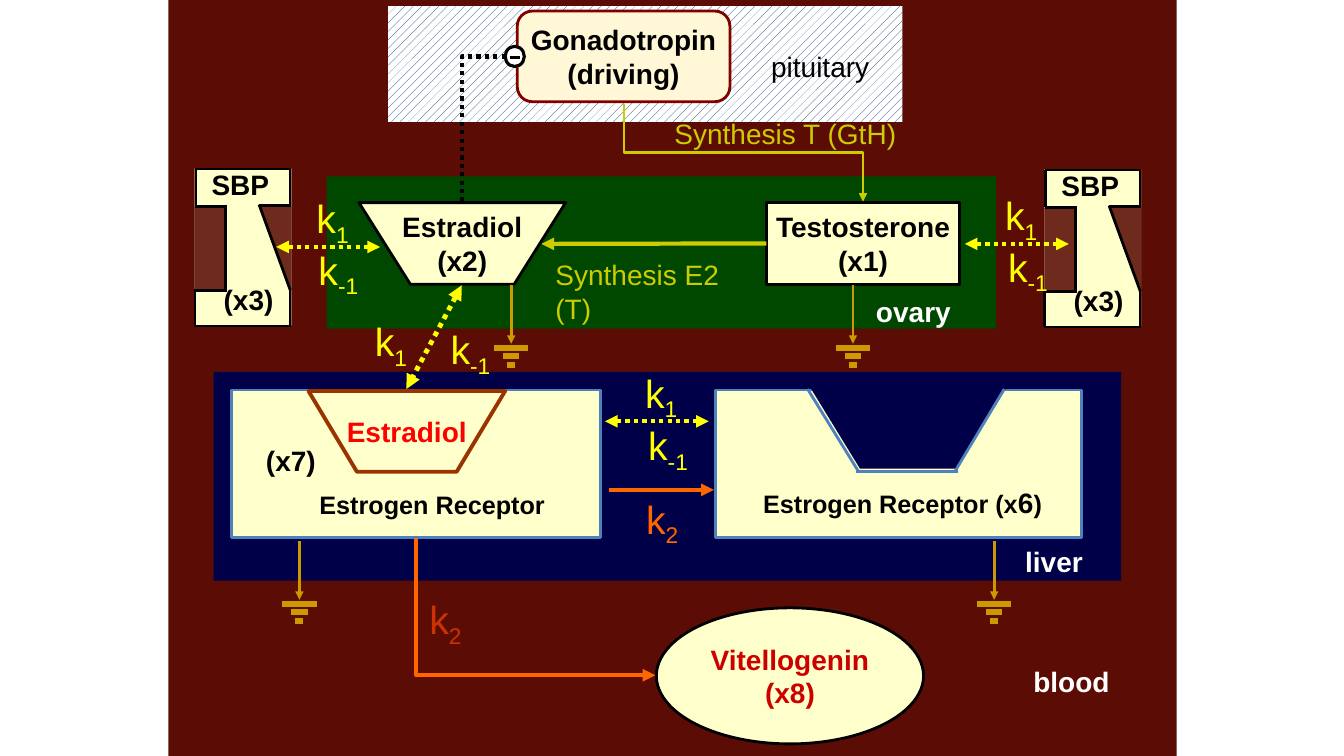
from lxml import etree
from pptx import Presentation
from pptx.dml.color import RGBColor
from pptx.enum import dml, shapes, text
from pptx.oxml.ns import qn
from pptx.util import Inches, Pt

BLACK = RGBColor(0x00, 0x00, 0x00)
WHITE = RGBColor(0xFF, 0xFF, 0xFF)
BLOOD = RGBColor(0x5B, 0x0D, 0x05)
LIVER = RGBColor(0x00, 0x00, 0x48)
OVARY = RGBColor(0x00, 0x48, 0x00)
HATCH = RGBColor(0x00, 0x33, 0x66)
CREAM = RGBColor(0xFF, 0xFF, 0xCC)
IVORY = RGBColor(0xFF, 0xF7, 0xD5)
MAROON = RGBColor(0x80, 0x00, 0x00)
BROWN = RGBColor(0x99, 0x33, 0x00)
BLUE = RGBColor(0x4F, 0x81, 0xBD)
RED = RGBColor(0xFF, 0x00, 0x00)
CRIMSON = RGBColor(0xCC, 0x00, 0x00)
RUST = RGBColor(0xCC, 0x33, 0x00)
ORANGE = RGBColor(0xFF, 0x66, 0x00)
YELLOW = RGBColor(0xFF, 0xFF, 0x00)
OLIVE = RGBColor(0xCC, 0xCC, 0x00)
GOLD = RGBColor(0xCC, 0x99, 0x00)

RECTANGLE = shapes.MSO_SHAPE.RECTANGLE
OVAL = shapes.MSO_SHAPE.OVAL
CENTER = text.PP_ALIGN.CENTER

presentation = Presentation()
presentation.slide_width = Inches(13.33)
presentation.slide_height = Inches(7.5)
slide = presentation.slides.add_slide(presentation.slide_layouts[6])


def format_shape(shape, words="", fill=None, line=None, width=2, size=20, color=BLACK,
                 bold=True, align=CENTER, anchor=text.MSO_ANCHOR.MIDDLE, wrap=False,
                 accent_size=None, baseline=0):
    """Style a shape and its text; parts between bars take the accent format."""
    shape.shadow.inherit = False
    if fill is None:
        shape.fill.background()
    else:
        shape.fill.solid()
        shape.fill.fore_color.rgb = fill
    if line is None:
        shape.line.fill.background()
    else:
        shape.line.color.rgb = line
        shape.line.width = Pt(width)
    if not words:
        return
    frame = shape.text_frame
    frame.word_wrap = wrap
    frame.vertical_anchor = anchor
    for row, content in enumerate(words.split("\n")):
        paragraph = frame.add_paragraph() if row else frame.paragraphs[0]
        paragraph.alignment = align
        for index, part in enumerate(content.split("|")):
            accent = index % 2 == 1
            run = paragraph.add_run()
            run.text = part
            run.font.name = "Arial"
            run.font.size = Pt(accent_size if accent and accent_size else size)
            run.font.bold = bold
            run.font.color.rgb = color
            if accent and baseline:
                run.font._element.set("baseline", str(baseline * 1000))


def draw_line(start, end, color, width, head=None, tail=None, dotted=False, bend=None):
    """Draw a line, or with a bend preset an elbow that leaves vertically."""
    (x1, y1), (x2, y2) = start, end
    if bend:  # an elbow is a horizontal one turned by 270 degrees about its centre
        cx, cy = (x1 + x2) / 2, (y1 + y2) / 2
        x1, y1, x2, y2 = cx + cy - y1, cy + x1 - cx, cx + cy - y2, cy + x2 - cx
    kind = shapes.MSO_CONNECTOR.ELBOW if bend else shapes.MSO_CONNECTOR.STRAIGHT
    connector = slide.shapes.add_connector(kind, *map(Inches, (x1, y1, x2, y2)))
    properties = connector._element.spPr
    if bend:
        properties.find(qn("a:xfrm")).set("rot", str(270 * 60000))
        properties.find(qn("a:prstGeom")).set("prst", bend)
    connector.line.color.rgb = color
    connector.line.width = Pt(width)
    if dotted:
        connector.line.dash_style = dml.MSO_LINE.ROUND_DOT
    for tag, style in (("a:headEnd", head), ("a:tailEnd", tail)):
        if style:
            etree.SubElement(properties.find(qn("a:ln")), qn(tag)).set("type", style)
    etree.SubElement(properties, qn("a:effectLst"))
    return connector


# Compartments and boxes, from back to front
boxes = {}
for name, kind, place, style in [
    ("blood", RECTANGLE, (1.67, 0, 10, 7.5), dict(fill=BLOOD)),
    ("liver", RECTANGLE, (2.12, 3.69, 9, 2.07), dict(fill=LIVER)),
    ("ovary", RECTANGLE, (3.24, 1.75, 6.64, 1.51), dict(fill=OVARY)),
    ("pituitary", RECTANGLE, (3.85, 0.06, 5.1, 1.15), dict(fill=WHITE)),
    ("testosterone", RECTANGLE, (7.6, 2.01, 1.92, 0.81),
     dict(words="Testosterone\n(x1)", fill=CREAM, line=BLACK)),
    ("vitellogenin", OVAL, (6.51, 6.03, 2.65, 1.35),
     dict(words="Vitellogenin\n(x8)", fill=CREAM, line=BLACK, color=CRIMSON)),
    ("gonadotropin", shapes.MSO_SHAPE.ROUNDED_RECTANGLE, (5.13, 0.11, 2.11, 0.9),
     dict(words="Gonadotropin\n(driving)", fill=IVORY, line=MAROON)),
    ("bound receptor", RECTANGLE, (2.3, 3.87, 3.66, 1.46), dict(fill=CREAM, line=BLUE)),
    ("free receptor", RECTANGLE, (7.1, 3.87, 3.63, 1.46), dict(fill=CREAM, line=BLUE)),
]:
    boxes[name] = slide.shapes.add_shape(kind, *map(Inches, place))
    format_shape(boxes[name], **style)
hatch = boxes["pituitary"].fill
hatch.patterned()
hatch.pattern = dml.MSO_PATTERN.PERCENT_20
hatch.fore_color.rgb = HATCH
hatch.back_color.rgb = WHITE

# Estradiol keys and the notch of the free receptor: left, top, width, height, slant
for left, top, width, height, slant, style in [
    (3.56, 2.01, 2.05, 0.81, 0.51, dict(words="Estradiol\n(x2)", fill=CREAM, line=BLACK)),
    (3.06, 3.88, 1.95, 0.8, 0.48,
     dict(words="Estradiol", fill=CREAM, line=BROWN, width=2.75, color=RED)),
    (8.04, 3.85, 1.94, 0.8, 0.49, dict(fill=LIVER)),
]:
    outline = slide.shapes.build_freeform(Inches(left), Inches(top), scale=1.0)
    outline.add_line_segments([(Inches(x), Inches(y)) for x, y in [
        (left + slant, top + height), (left + width - slant, top + height),
        (left + width, top)]])
    format_shape(outline.convert_to_shape(), **style)
for start, end in [((8.01, 3.86), (8.51, 4.67)), ((8.49, 4.68), (9.5, 4.68)),
                   ((9.47, 4.68), (9.96, 3.86))]:
    draw_line(start, end, BLUE, 2)

# Binding proteins on both sides, drawn relative to their top left corner
sbp_edges = [
    (0, 0.38, 0.32, 0.38, 2), (0, 1.21, 0.32, 1.21, 2), (0.31, 0.38, 0.31, 1.21, 2),
    (0.64, 0.37, 0.96, 0.37, 2), (0.64, 0.36, 0.95, 1.21, 2),
    (0.95, 0.37, 0.95, 0.02, 1.5), (0.01, 0.37, 0.01, 0.01, 1.5),
    (0.95, 1.55, 0.95, 1.2, 1.5), (0, 1.56, 0, 1.2, 1.5),
    (-0.01, 1.56, 0.96, 1.56, 1.5), (0, 0.01, 0.96, 0.01, 1.5),
]
labels = []
for left, top in [(1.93, 1.67), (10.36, 1.68)]:
    body = slide.shapes.add_shape(RECTANGLE, *map(Inches, (left, top, 0.96, 1.56)))
    format_shape(body, fill=CREAM)
    for kind, offset, width, turn in [
        (RECTANGLE, 0, 0.3, 0), (shapes.MSO_SHAPE.RIGHT_TRIANGLE, 0.65, 0.31, 180),
    ]:
        cutout = slide.shapes.add_shape(
            kind, *map(Inches, (left + offset, top + 0.38, width, 0.82)))
        cutout.rotation = turn
        format_shape(cutout, fill=BLOOD)
        tint = cutout._element.spPr.find(qn("a:solidFill"))[0]
        etree.SubElement(tint, qn("a:alpha")).set("val", "88000")
    for x1, y1, x2, y2, width in sbp_edges:
        draw_line((left + x1, top + y1), (left + x2, top + y2), BLACK, width)
    labels += [("SBP", left + 0.07, top - 0.06, 0.9, {}),
               ("(x3)", left + 0.19, top + 1.08, 0.8, {})]

# Degradation: an arrow down to three shrinking bars
for x, y in [(8.46, 2.83), (5.07, 2.83), (2.97, 5.37), (9.86, 5.37)]:
    draw_line((x, y), (x, y + 0.58), GOLD, 2, tail="triangle")
    for drop, half in [(0.62, 0.17), (0.7, 0.08), (0.79, 0.04)]:
        draw_line((x - half, y + drop), (x + half, y + drop), GOLD, 4)

# Synthesis, reaction and binding arrows
synthesis = draw_line((7.6, 2.42), (5.37, 2.42), OLIVE, 3, tail="triangle")
synthesis.begin_connect(boxes["testosterone"], 1)
draw_line((6.19, 1.03), (8.56, 2), OLIVE, 2, tail="triangle", bend="bentConnector3")
draw_line((6.04, 4.86), (7.08, 4.86), ORANGE, 3, tail="triangle")
draw_line((4.13, 5.34), (6.5, 6.7), ORANGE, 3, tail="triangle", bend="bentConnector2")
for start, end, width in [
    ((4.58, 2.83), (4.03, 3.86), 3.5), ((7.03, 4.18), (6, 4.18), 3),
    ((10.6, 2.42), (9.57, 2.42), 3), ((3.77, 2.45), (2.74, 2.45), 3),
]:
    draw_line(start, end, YELLOW, width, head="triangle", tail="triangle", dotted=True)

# Inhibition of gonadotropin
draw_line((4.58, 2), (5.12, 0.56), BLACK, 3, tail="oval", dotted=True, bend="bentConnector2")
minus = slide.shapes.add_shape(OVAL, *map(Inches, (5.01, 0.46, 0.19, 0.2)))
format_shape(minus, fill=WHITE, line=BLACK, width=2.25)
draw_line((5.06, 0.57), (5.16, 0.57), BLACK, 2.5)

# Labels: words, left, top, width, format
labels += [
    ("Estrogen Receptor", 3.07, 4.81, 2.6, dict(size=18)),
    ("(x7)", 2.54, 4.35, 0.8, {}),
    ("Estrogen Receptor (x|6|)", 7.47, 4.77, 3.1, dict(size=18, accent_size=20)),
    ("pituitary", 7.55, 0.44, 1.63, dict(bold=False)),
    ("liver", 10.07, 5.35, 0.97, dict(color=WHITE)),
    ("ovary", 8.59, 2.87, 1.16, dict(color=WHITE)),
    ("blood", 10.15, 6.54, 0.97, dict(color=WHITE)),
    ("Synthesis E2 (T)", 5.41, 2.51, 1.95, dict(color=OLIVE, bold=False)),
    ("Synthesis T (GtH)", 6.59, 1.11, 2.6, dict(color=OLIVE, bold=False)),
]
for index, left, top, color in [
    ("1", 3.62, 3.1, YELLOW), ("-1", 4.37, 3.18, YELLOW),
    ("1", 6.3, 3.61, YELLOW), ("-1", 6.33, 4.13, YELLOW),
    ("1", 9.87, 1.85, YELLOW), ("-1", 9.9, 2.36, YELLOW),
    ("1", 3.04, 1.88, YELLOW), ("-1", 3.06, 2.39, YELLOW),
    ("2", 6.31, 4.86, ORANGE), ("2", 4.16, 5.86, RUST),
]:
    labels.append((f"k|{index}", left, top, 0.75,
                   dict(size=28, color=color, bold=False, baseline=-25)))
for words, left, top, width, style in labels:
    height = 0.57 if words.startswith("k") else 0.43
    label = slide.shapes.add_textbox(*map(Inches, (left, top, width, height)))
    format_shape(label, words, align=text.PP_ALIGN.LEFT, anchor=text.MSO_ANCHOR.TOP,
                 wrap=True, **style)

presentation.save("out.pptx")
